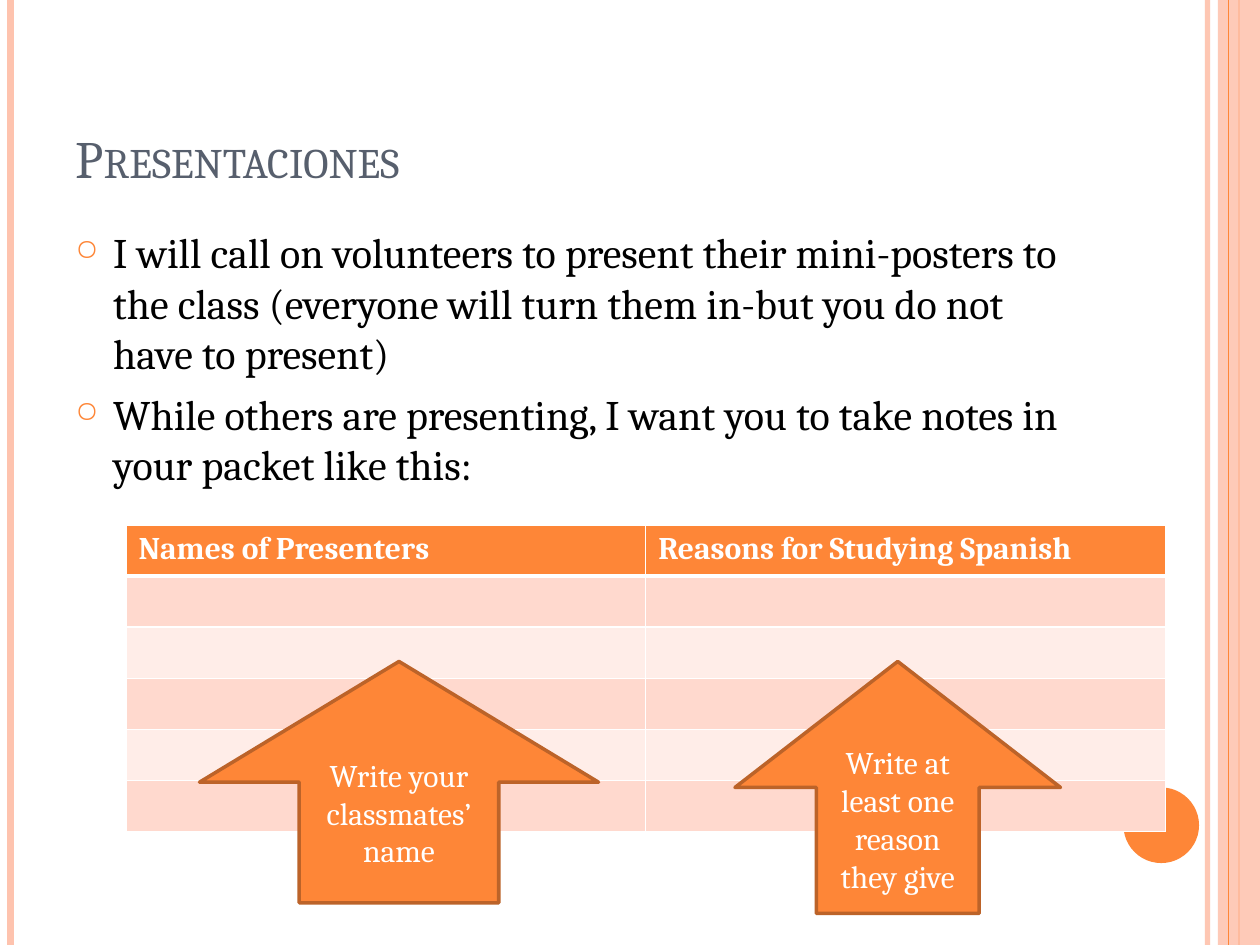
"""Build the Presentaciones slide with its note-taking table and two arrows."""
from lxml import etree
from pptx import Presentation
from pptx import util as u
from pptx.dml.color import RGBColor
from pptx.enum import shapes, text
from pptx.oxml import ns

Pt = u.Pt
COLORS = {"orange": "FE8637", "peach": "FEC3AE", "edge": "BC6329", "slate": "575F6D",
          "white": "FFFFFF", "black": "000000", "band": "FFD9CE", "light": "FFEDE8"}


def add(parent, tag, **attrs):
    return etree.SubElement(parent, ns.qn(tag), {k: str(v) for k, v in attrs.items()})


def style(p, color, **fmt):
    p.font.color.rgb = RGBColor.from_string(COLORS[color])
    for name, value in {"name": "Cambria", **fmt}.items():
        setattr(p.font, name, value)


prs = Presentation()
prs.slide_width, prs.slide_height = Pt(720), Pt(540)
s = prs.slides.add_slide(prs.slide_layouts[5])

for x, color, width, alpha in [(690, "peach", 3, 93), (6, "peach", 4.5, 100),
                               (708, "orange", 1.5, 100), (None, "peach", 0, 87),
                               (702, "orange", 0.75, 100)]:
    if x is None:
        sp = s.shapes.add_shape(shapes.MSO_SHAPE.RECTANGLE, Pt(696), 0, Pt(24), Pt(540))
        sp.shadow.inherit = False
        sp.line.fill.background()
        fill = sp.fill
        fill.solid()
    else:
        sp = s.shapes.add_connector(shapes.MSO_CONNECTOR.STRAIGHT, Pt(x), 0, Pt(x), Pt(540))
        sp.line.width = Pt(width)
        fill = sp.line.fill
        fill.solid()
        add(sp._element.spPr, "a:effectLst")
    fill.fore_color.rgb = RGBColor.from_string(COLORS[color])
    if alpha < 100:
        clr = next(sp._element.spPr.iter(ns.qn("a:srgbClr")))
        add(clr, "a:alpha", val=alpha * 1000)

dot = s.shapes.add_shape(shapes.MSO_SHAPE.OVAL, Pt(642), Pt(450), Pt(43.2), Pt(43.2))
dot.shadow.inherit = False
dot.fill.solid()
dot.fill.fore_color.rgb = RGBColor.from_string(COLORS["orange"])
dot.line.fill.background()

title = s.shapes.title
for name, value in {"left": 36, "top": 21.6, "width": 588, "height": 90}.items():
    setattr(title, name, Pt(value))
tf = title.text_frame
tf.text = "Presentaciones"
for name, value in {"vertical_anchor": text.MSO_ANCHOR.BOTTOM, "word_wrap": True,
                    "auto_size": text.MSO_AUTO_SIZE.NONE}.items():
    setattr(tf, name, value)
p = tf.paragraphs[0]
p.alignment = text.PP_ALIGN.LEFT
r = p.runs[0]
style(r, "slate", size=Pt(30))
r.font._element.set("cap", "small")

body = s.shapes.add_textbox(Pt(36), Pt(126), Pt(588), Pt(384))
tf = body.text_frame
tf.word_wrap = True
tf.text = ("I will call on volunteers to present their mini-posters to the class "
           "(everyone will turn them in-but you do not have to present)\n"
           "While others are presenting, I want you to take notes in your packet like this:")
for p in tf.paragraphs:
    style(p.runs[0], "black", size=Pt(24))
    p.space_before = Pt(6)
    pPr = p._p.get_or_add_pPr()
    pPr.set("marL", str(Pt(21.6)))
    pPr.set("indent", str(-Pt(21.6)))
    add(add(pPr, "a:buClr"), "a:srgbClr", val=COLORS["orange"])
    add(pPr, "a:buSzPct", val=70000)
    add(pPr, "a:buChar", char="○")

headers = ["Names of Presenters", "Reasons for Studying Spanish"]
table = s.shapes.add_table(6, 2, Pt(72), Pt(300), Pt(594), Pt(175.2)).table
for i, row in enumerate(table.rows):
    row.height = Pt(29.2)
    for j, cell in enumerate(row.cells):
        tcPr = cell._tc.get_or_add_tcPr()
        for side in "LRTB":
            heavy = (side == "B" and i == 0) or (side == "T" and i == 1)
            ln = add(tcPr, f"a:ln{side}", w=Pt(3 if heavy else 1))
            add(add(ln, "a:solidFill"), "a:srgbClr", val=COLORS["white"])
        color = "orange" if i == 0 else "band" if i % 2 else "light"
        cell.fill.solid()
        cell.fill.fore_color.rgb = RGBColor.from_string(COLORS[color])
        if i == 0:
            cell.text = headers[j]
            style(cell.text_frame.paragraphs[0].runs[0], "white", size=Pt(18), bold=True)

for x, w, h, label in [(114, 228, 138, "Write your classmates’ name"),
                       (420, 186, 144, "Write at least one reason they give")]:
    sp = s.shapes.add_shape(shapes.MSO_SHAPE.UP_ARROW, Pt(x), Pt(378), Pt(w), Pt(h))
    sp.shadow.inherit = False
    sp.fill.solid()
    sp.fill.fore_color.rgb = RGBColor.from_string(COLORS["orange"])
    sp.line.color.rgb = RGBColor.from_string(COLORS["edge"])
    sp.line.width = Pt(2)
    tf = sp.text_frame
    tf.text = label
    tf.word_wrap = True
    tf.vertical_anchor = text.MSO_ANCHOR.MIDDLE
    p = tf.paragraphs[0]
    p.alignment = text.PP_ALIGN.CENTER
    style(p.runs[0], "white", size=Pt(18))

prs.save("out.pptx")
